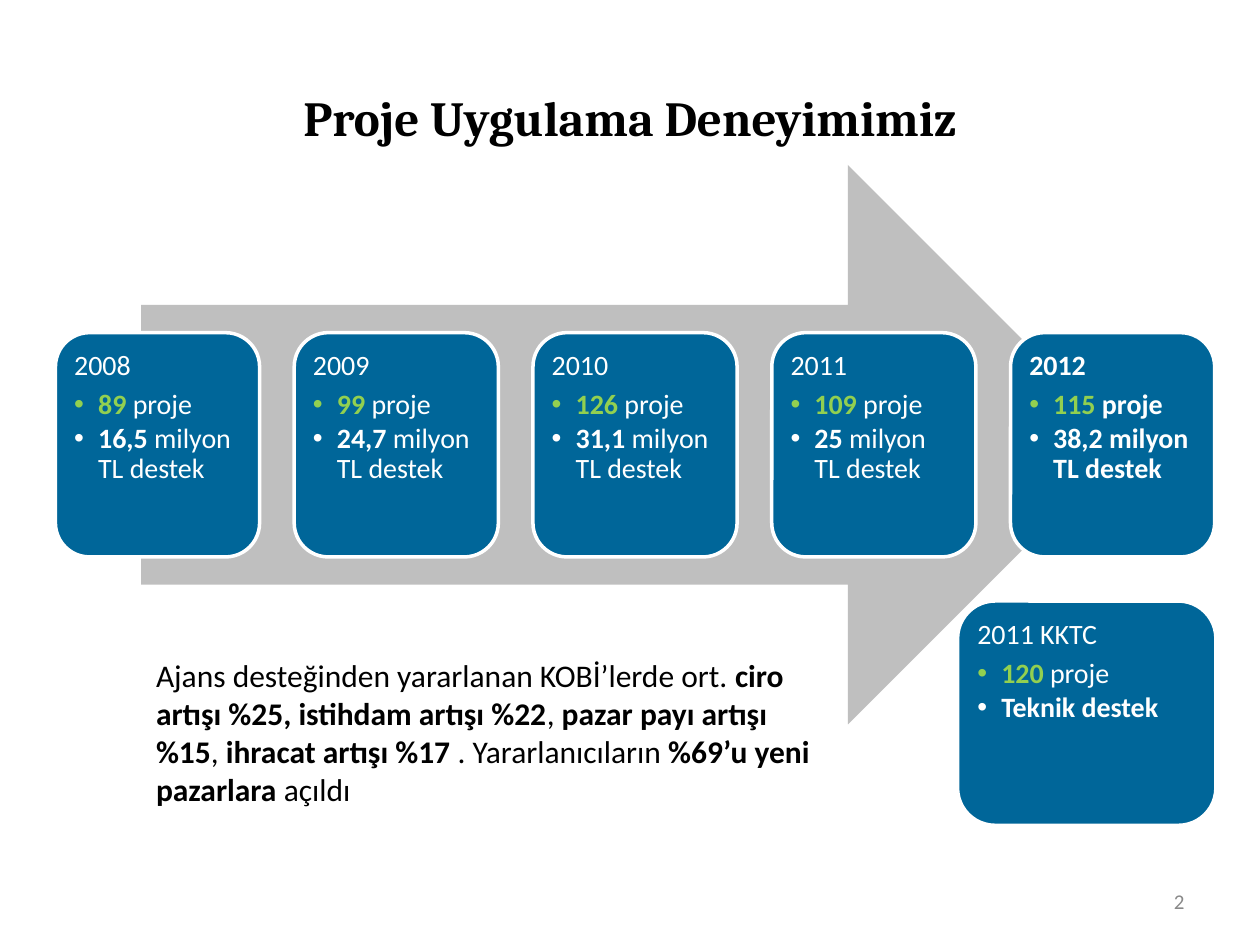
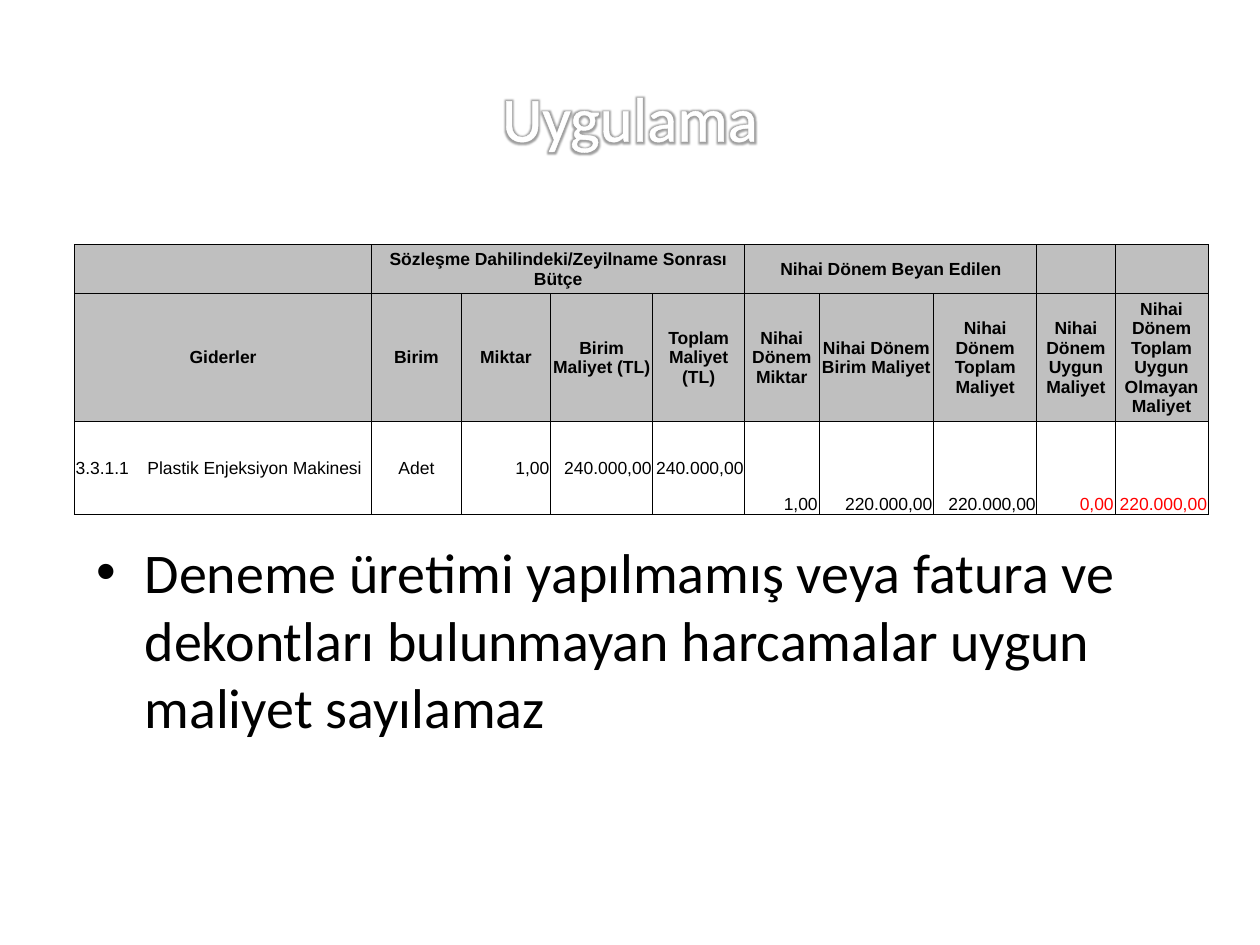
from typing import NamedTuple

from lxml.etree import SubElement
from pptx import Presentation
from pptx.dml.color import RGBColor
from pptx.enum.shapes import MSO_SHAPE as Shape
from pptx.enum.text import MSO_ANCHOR as Anchor, PP_ALIGN as Align
from pptx.oxml import parse_xml
from pptx.oxml.ns import nsdecls, qn
from pptx.util import Inches, Pt

COLORS = {
    "black": "000000", "white": "FFFFFF", "blue": "006699", "green": "92D050",
    "arrow": "BFBFBF", "header": "C0C0C0", "footer": "898989",
    "red": "FF0000", "glow": "808080",
}
CARD_TOP, CARD_WIDTH, CARD_HEIGHT, CARD_PITCH = 2.64, 1.62, 1.78, 1.895
CARD_INSET = 0.07
COLUMN_WIDTHS = [2.36, 0.71, 0.71, 0.81, 0.73, 0.59, 0.91, 0.82, 0.62, 0.74]
ROW_HEIGHTS = [0.39, 0.94, 0.74]


class Span(NamedTuple):
    text: str
    bold: bool = False
    color: str = "white"


class Card(NamedTuple):
    heading: list
    bullets: list
    left: float
    top: float = CARD_TOP
    width: float = CARD_WIDTH


class Entry(NamedTuple):
    text: str
    align: Align = Align.RIGHT
    anchor: Anchor = Anchor.MIDDLE
    color: str = "black"
    bold: bool = False
    fill: str = ""


def rgb(name: str) -> RGBColor:
    return RGBColor.from_string(COLORS[name])


def set_attrs(target, values: dict) -> None:
    for name, value in values.items():
        setattr(target, name, value)


def add_runs(p, spans: list, size: float, font: str = "Calibri") -> None:
    for span in spans:
        r = p.add_run()
        r.text = span.text
        set_attrs(r.font, {"size": Pt(size), "name": font, "bold": span.bold})
        r.font.color.rgb = rgb(span.color)


def add_bullet(p, indent: float) -> None:
    pPr = p._p.get_or_add_pPr()
    pPr.set("marL", str(Inches(indent)))
    pPr.set("indent", str(-Inches(indent)))
    SubElement(pPr, qn("a:buFont")).set("typeface", "Arial")
    SubElement(pPr, qn("a:buChar")).set("char", "•")


def add_tab(p, position: float) -> None:
    tabs = SubElement(p._p.get_or_add_pPr(), qn("a:tabLst"))
    tab = SubElement(tabs, qn("a:tab"))
    tab.set("pos", str(Inches(position)))
    tab.set("algn", "l")


def set_title(slide, span: Span, size: float, font: str):
    sp = slide.shapes.title
    set_attrs(sp, {"left": Inches(0.5), "top": Inches(0.3),
                   "width": Inches(9), "height": Inches(1.25)})
    sp.text_frame.vertical_anchor = Anchor.MIDDLE
    p = sp.text_frame.paragraphs[0]
    p.alignment = Align.CENTER
    add_runs(p, [span], size, font)
    return p.runs[0]


def add_glow(r) -> None:
    rPr = r._r.get_or_add_rPr()
    rPr.insert(0, parse_xml(
        f'<a:ln {nsdecls("a")} w="{Pt(1.45)}"><a:solidFill>'
        f'<a:srgbClr val="{COLORS["white"]}"/></a:solidFill></a:ln>'))
    rPr.find(qn("a:solidFill")).addnext(parse_xml(
        f'<a:effectLst {nsdecls("a")}><a:glow rad="{Pt(5)}">'
        f'<a:srgbClr val="{COLORS["glow"]}"><a:alpha val="75000"/></a:srgbClr>'
        '</a:glow></a:effectLst>'))


def add_text(slide, box: tuple, spans: list, size: float):
    sp = slide.shapes.add_textbox(*map(Inches, box))
    tf = sp.text_frame
    tf.word_wrap = True
    p = tf.paragraphs[0]
    add_runs(p, spans, size)
    return tf, p


def add_filled_shape(slide, kind: Shape, box: tuple, color: str):
    sp = slide.shapes.add_shape(kind, *map(Inches, box))
    sp.shadow.inherit = False
    sp.fill.solid()
    sp.fill.fore_color.rgb = rgb(color)
    sp.line.fill.background()
    return sp


def draw_card(slide, card: Card) -> None:
    box = (card.left, card.top, card.width, CARD_HEIGHT)
    sp = add_filled_shape(slide, Shape.ROUNDED_RECTANGLE, box, "blue")
    sp.line.color.rgb = rgb("white")
    sp.line.width = Pt(2)
    tf = sp.text_frame
    set_attrs(tf, {"word_wrap": True, "vertical_anchor": Anchor.TOP})
    set_attrs(tf, {f"margin_{side}": Inches(CARD_INSET)
                   for side in ("left", "top", "right", "bottom")})
    for i, spans in enumerate([card.heading, *card.bullets]):
        p = tf.add_paragraph() if i else tf.paragraphs[0]
        if i:
            add_bullet(p, 0.19)
        set_attrs(p, {"alignment": Align.LEFT, "line_spacing": 0.9,
                      "space_after": Pt(2 if i else 5)})
        add_runs(p, spans, 16)


def draw_cell(cell, entry: Entry) -> None:
    set_attrs(cell, {"margin_left": Inches(0.01), "margin_right": Inches(0.01),
                     "margin_top": Inches(0.01), "margin_bottom": 0,
                     "vertical_anchor": entry.anchor})
    tcPr = cell._tc.get_or_add_tcPr()
    for side in "LRTB":
        tcPr.append(parse_xml(
            f'<a:ln{side} {nsdecls("a")} w="{Pt(0.5)}"><a:solidFill>'
            f'<a:srgbClr val="{COLORS["black"]}"/></a:solidFill></a:ln{side}>'))
    if entry.fill:
        cell.fill.solid()
        cell.fill.fore_color.rgb = rgb(entry.fill)
    else:
        cell.fill.background()
    p = cell.text_frame.paragraphs[0]
    if "\t" in entry.text:
        add_tab(p, 0.57)
    p.alignment = entry.align
    if entry.text:
        add_runs(p, [Span(entry.text, entry.bold, entry.color)], 10, "Arial")


def header(text: str, fill: str = "header") -> Entry:
    return Entry(text, Align.CENTER, bold=True, fill=fill)


def draw_cost_table(slide) -> None:
    groups = {1: "Sözleşme Dahilindeki/Zeyilname Sonrası Bütçe",
              5: "Nihai Dönem Beyan Edilen"}
    headings = [
        "Giderler", "Birim", "Miktar", "Birim Maliyet (TL)", "Toplam Maliyet (TL)",
        "Nihai Dönem Miktar", "Nihai Dönem Birim Maliyet",
        "Nihai Dönem Toplam Maliyet", "Nihai Dönem Uygun Maliyet",
        "Nihai Dönem Toplam Uygun Olmayan Maliyet",
    ]
    rows = [
        [header(groups.get(c, ""), "arrow") for c in range(len(COLUMN_WIDTHS))],
        [header(text, "arrow" if c == 6 else "header")
         for c, text in enumerate(headings)],
        [
            Entry("3.3.1.1\tPlastik Enjeksiyon Makinesi", Align.LEFT),
            Entry("Adet", Align.CENTER),
            *map(Entry, ("1,00", "240.000,00", "240.000,00")),
            *(Entry(text, anchor=Anchor.BOTTOM)
              for text in ("1,00", "220.000,00", "220.000,00")),
            *(Entry(text, anchor=Anchor.BOTTOM, color="red")
              for text in ("0,00", "220.000,00")),
        ],
    ]
    table = slide.shapes.add_table(
        len(rows), len(COLUMN_WIDTHS), Inches(0.59), Inches(1.94),
        Inches(sum(COLUMN_WIDTHS)), Inches(sum(ROW_HEIGHTS))).table
    set_attrs(table, {"first_row": False, "horz_banding": False})
    for column, width in zip(table.columns, COLUMN_WIDTHS):
        column.width = Inches(width)
    for row, height in zip(table.rows, ROW_HEIGHTS):
        row.height = Inches(height)
    for first, last in ((1, 4), (5, 7)):
        table.cell(0, first).merge(table.cell(0, last))
    for r, entries in enumerate(rows):
        for c, entry in enumerate(entries):
            draw_cell(table.cell(r, c), entry)


def build_experience(prs) -> None:
    slide = prs.slides.add_slide(prs.slide_layouts[5])
    set_title(slide, Span("Proje Uygulama Deneyimimiz", True, "black"), 28, "Cambria")
    add_filled_shape(slide, Shape.RIGHT_ARROW, (1.12, 1.31, 7.83, 4.44), "arrow")
    years = [("2008", "89", "16,5"), ("2009", "99", "24,7"), ("2010", "126", "31,1"),
             ("2011", "109", "25"), ("2012", "115", "38,2")]
    for i, (year, projects, millions) in enumerate(years):
        latest = i == len(years) - 1
        draw_card(slide, Card(
            [Span(year, latest)],
            [[Span(projects, True, "green"), Span(" proje", latest)],
             [Span(millions, True), Span(" milyon TL destek", latest)]],
            0.44 + i * CARD_PITCH))
    draw_card(slide, Card(
        [Span("2011 KKTC")],
        [[Span("120", True, "green"), Span(" proje")], [Span("Teknik destek", True)]],
        7.6, 4.77, 2.05))
    sentence = [
        "Ajans desteğinden yararlanan KOBİ’lerde ort. ",
        "ciro artışı %25, istihdam artışı %22", ", ", "pazar payı artışı %15", ", ",
        "ihracat artışı %17 ", ". Yararlanıcıların ", "%69’u yeni pazarlara ", "açıldı",
    ]
    add_text(slide, (1.14, 5.16, 5.43, 1.31),
             [Span(text, i % 2 == 1, "black") for i, text in enumerate(sentence)], 18)
    tf, p = add_text(slide, (7.17, 6.95, 2.33, 0.4), [Span("2", color="footer")], 12)
    tf.vertical_anchor = Anchor.MIDDLE
    p.alignment = Align.RIGHT


def build_practice(prs) -> None:
    slide = prs.slides.add_slide(prs.slide_layouts[5])
    add_glow(set_title(slide, Span("Uygulama"), 36, "Calibri"))
    _, p = add_text(slide, (0.67, 4.22, 8.74, 1.97), [Span(
        "Deneme üretimi yapılmamış veya fatura ve dekontları bulunmayan "
        "harcamalar uygun maliyet sayılamaz", color="black")], 32)
    add_bullet(p, 0.38)
    draw_cost_table(slide)


def main() -> None:
    prs = Presentation()
    set_attrs(prs, {"slide_width": Inches(10), "slide_height": Inches(7.5)})
    build_experience(prs)
    build_practice(prs)
    prs.save("out.pptx")


if __name__ == "__main__":
    main()
